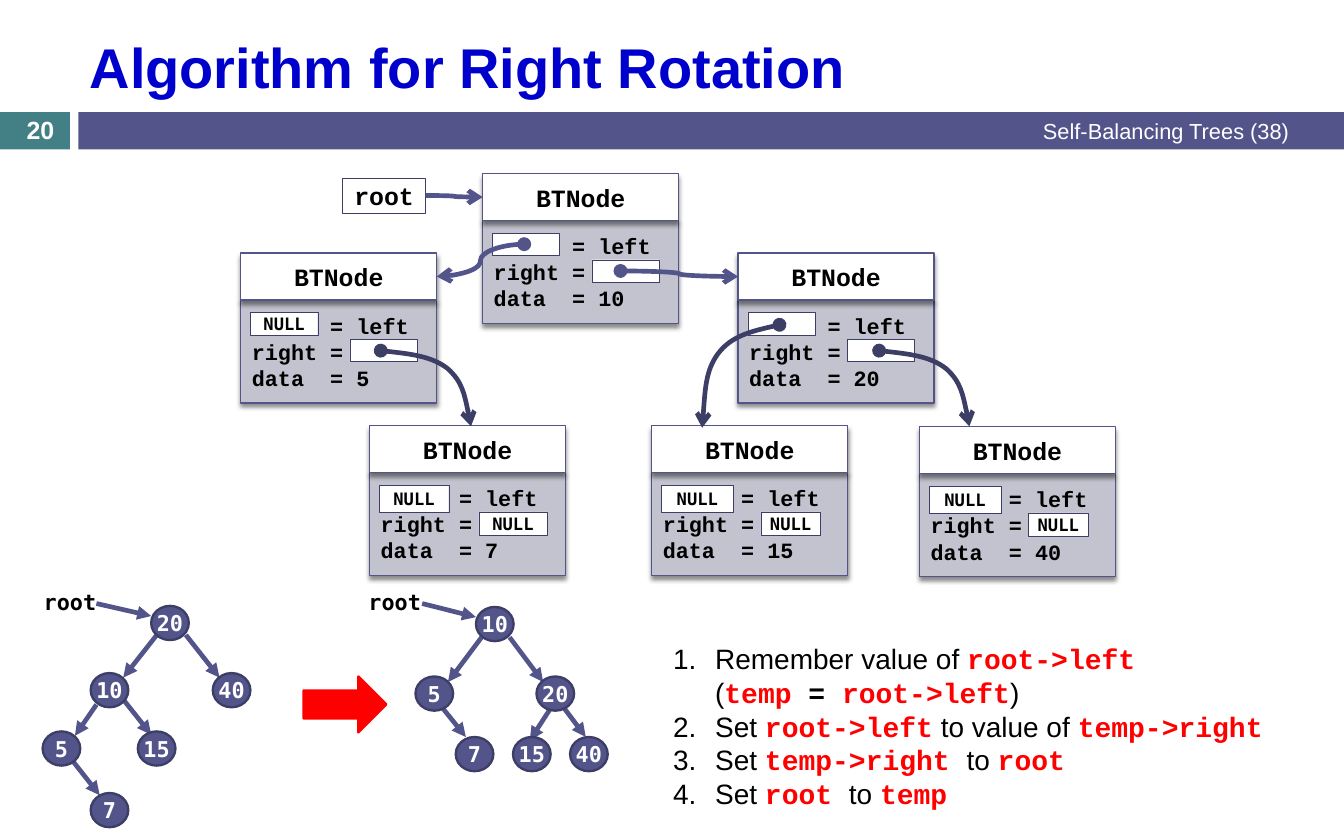
"""Build a slide that explains right rotation of a binary tree."""
import pptx
import pptx.dml.color
import pptx.enum.shapes
import pptx.enum.text
import pptx.oxml.ns
import pptx.util
from lxml import etree

Pt = pptx.util.Pt
qn = pptx.oxml.ns.qn
SHAPE = pptx.enum.shapes.MSO_SHAPE
CONNECTOR = pptx.enum.shapes.MSO_CONNECTOR
ALIGN = pptx.enum.text.PP_ALIGN
ANCHOR = pptx.enum.text.MSO_ANCHOR

INDIGO, NAVY, TEAL, GREY = "53548A", "3D3E66", "438086", "C3C3CF"
BLACK, WHITE, RED, BLUE = "000000", "FFFFFF", "FF0000", "0000CC"
SANS, CODE, MONO = "Arial", "Courier New", "DejaVu Sans Mono"


def rgb(value):
    return pptx.dml.color.RGBColor.from_string(value)


def set_font(font, name, size, color, bold=True):
    font.name, font.size, font.bold = name, Pt(size), bold
    font.color.rgb = rgb(color)


def add_xml(parent, tag, **attributes):
    return etree.SubElement(parent, qn(tag), attributes)


class SlideBuilder:
    def __init__(self, slide):
        self.slide = slide
        self.shapes = slide.shapes

    def set_text(self, shape, lines, name, size, color, bold=True, align=ALIGN.CENTER,
                 anchor=ANCHOR.MIDDLE, inset=None, tab=None):
        frame = shape.text_frame
        frame.word_wrap = True
        frame.vertical_anchor = anchor
        if inset is not None:
            frame.margin_left = frame.margin_right = Pt(inset)
            frame.margin_top = frame.margin_bottom = Pt(inset)
        frame.text = "\n".join(lines)
        for paragraph in frame.paragraphs:
            paragraph.alignment = align
            if tab:
                stops = add_xml(paragraph._p.get_or_add_pPr(), "a:tabLst")
                add_xml(stops, "a:tab", pos=str(Pt(tab)), algn="l")
            set_font(paragraph.font, name, size, color, bold)

    def box(self, frame, fill, line=None, width=0.25, kind=SHAPE.RECTANGLE, shadow=False):
        shape = self.shapes.add_shape(kind, *map(Pt, frame))
        shape.shadow.inherit = False
        shape.fill.solid()
        shape.fill.fore_color.rgb = rgb(fill)
        if line:
            shape.line.color.rgb = rgb(line)
            shape.line.width = Pt(width)
        else:
            shape.line.fill.background()
        if shadow:
            effects = shape.element.spPr.find(qn("a:effectLst"))
            outer = add_xml(effects, "a:outerShdw", blurRad=str(Pt(3)), dist=str(Pt(2.4)),
                            dir="5400000", rotWithShape="0")
            tint = add_xml(outer, "a:srgbClr", val=BLACK)
            add_xml(tint, "a:alpha", val="45000")
        return shape

    def label(self, frame, text, name, size, color, **style):
        self.set_text(self.shapes.add_textbox(*map(Pt, frame)), [text], name, size, color, **style)

    def place(self, placeholder, frame):
        placeholder.left, placeholder.top, placeholder.width, placeholder.height = map(Pt, frame)

    def title(self, frame, text):
        self.place(self.shapes.title, frame)
        self.set_text(self.shapes.title, [text], SANS, 36, BLUE, align=ALIGN.LEFT)

    def steps(self, frame, items):
        body = self.slide.placeholders[1]
        self.place(body, frame)
        text = body.text_frame
        text.auto_size = pptx.enum.text.MSO_AUTO_SIZE.NONE
        text.vertical_anchor = ANCHOR.TOP
        for index, item in enumerate(items):
            paragraph = text.paragraphs[0] if index == 0 else text.add_paragraph()
            paragraph.space_before = Pt(0)
            properties = paragraph._p.get_or_add_pPr()
            properties.set("marL", str(Pt(27)))
            properties.set("indent", str(Pt(-27)))
            add_xml(properties, "a:buFont", typeface=SANS)
            add_xml(properties, "a:buAutoNum", type="arabicPeriod")
            set_font(paragraph.font, SANS, 18, BLACK, False)
            for wording, name, color in item:
                if wording == "\n":
                    paragraph.add_line_break()
                    continue
                run = paragraph.add_run()
                run.text = wording
                set_font(run.font, name, 18, color, name == CODE)

    def stroke(self, shape, color, head, tail):
        shape.line.color.rgb = rgb(color)
        shape.line.width = Pt(3)
        line = shape.element.spPr.find(qn("a:ln"))
        add_xml(line, "a:headEnd", type=head)
        add_xml(line, "a:tailEnd", type=tail)

    def link(self, ends, kind=CONNECTOR.STRAIGHT, head="none", tail="triangle",
             begin=None, end=None):
        connector = self.shapes.add_connector(kind, *map(Pt, ends))
        if begin:
            connector.begin_connect(*begin)
        if end:
            connector.end_connect(*end)
        self.stroke(connector, INDIGO, head, tail)
        add_xml(connector.element.spPr, "a:effectLst")

    def pointer(self, x, y, offsets):
        builder = self.shapes.build_freeform(Pt(x), Pt(y))
        builder.add_line_segments([(Pt(x + dx), Pt(y + dy)) for dx, dy in offsets], close=False)
        curve = builder.convert_to_shape()
        curve.shadow.inherit = False
        curve.fill.background()
        segments = curve.element.xpath(".//a:lnTo")
        for first in range(0, len(segments), 3):
            bezier = etree.Element(qn("a:cubicBezTo"))
            segments[first].addprevious(bezier)
            for segment in segments[first:first + 3]:
                bezier.append(segment[0])
                segment.getparent().remove(segment)
        self.stroke(curve, NAVY, "oval", "arrow")

    def slot(self, frame, value):
        field = self.box(frame, WHITE, NAVY)
        if value:
            self.set_text(field, [value], MONO, 11, BLACK, inset=0)

    def node(self, data, x, y, left, right, left_size, right_size):
        fields = self.box((x, y + 30.2, 126, 66.2), GREY, INDIGO, 0.79, shadow=True)
        self.set_text(fields, ["\t= left", "right\t=", f"data\t= {data}"], CODE, 14, BLACK,
                      align=ALIGN.LEFT, tab=50.4)
        self.slot((x + 6.3, y + 38.3, *left_size), left)
        self.slot((x + 70.2, y + 55.4, *right_size), right)
        header = self.box((x, y, 126, 30.2), WHITE, INDIGO, 0.79, shadow=True)
        self.set_text(header, ["BTNode"], CODE, 16, BLACK)
        return header

    def tree(self, root_frame, edges, nodes):
        self.label(root_frame, "root", MONO, 14, BLACK, align=ALIGN.RIGHT,
                   anchor=ANCHOR.TOP, inset=0)
        for ends in edges:
            self.link(ends)
        for data, x, y in nodes:
            circle = self.box((x, y, 24.2, 22), INDIGO, NAVY, 1.5, SHAPE.OVAL)
            self.set_text(circle, [str(data)], MONO, 14, WHITE, inset=0)


def main():
    deck = pptx.Presentation()
    deck.slide_width, deck.slide_height = Pt(864), Pt(540)
    page = SlideBuilder(deck.slides.add_slide(deck.slide_layouts[1]))

    page.box((0, 72, 45, 24), TEAL)
    page.box((50.4, 72, 813.6, 24), INDIGO)
    page.title((50.4, 13.7, 785.5, 57.6), "Algorithm for Right Rotation")
    page.label((324, 71.3, 512, 25.2), "Self-Balancing Trees (38)", SANS, 14, WHITE,
               bold=False, align=ALIGN.RIGHT)
    page.label((0, 72.7, 51.8, 21.6), "20", SANS, 16, WHITE)

    root = page.box((220.3, 114.5, 53.3, 22.3), WHITE, NAVY)
    page.set_text(root, ["root"], CODE, 16, BLACK)
    wide, leaf_left, leaf_right = (43.2, 14.4), (46, 17.3), (38.2, 15.1)
    node_rows = [
        (10, 310.3, 111.6, "", "", wide, wide),
        (20, 474.5, 162.7, "", "", wide, wide),
        (5, 154.8, 162.7, "NULL", "", wide, wide),
        (15, 419, 273.6, "NULL", "NULL", leaf_left, leaf_right),
        (7, 237.6, 273.6, "NULL", "NULL", (44.6, 17.3), (43.9, 15.1)),
        (40, 591.1, 274.3, "NULL", "NULL", leaf_left, leaf_right),
    ]
    headers = {row[0]: page.node(*row) for row in node_rows}
    page.link((273.6, 125.6, 310.3, 126.7), CONNECTOR.CURVE, tail="arrow",
              begin=(root, 3), end=(headers[10], 1))
    page.link((398.9, 174.2, 474.5, 177.8), CONNECTOR.CURVE, "oval", "arrow",
              end=(headers[20], 1))
    page.link((337, 157, 280.8, 177.8), CONNECTOR.CURVE, "oval", "arrow",
              end=(headers[5], 3))
    to_right = [(16.6, 1.8), (33.1, 3.6), (43.2, 11.7), (52.6, 20.2), (55.4, 34.6), (58, 48.6)]
    to_left = [(-15.8, 3.6), (-31, 7.2), (-39.6, 18.7), (-47.5, 29.5), (-48.2, 48.2),
               (-49.7, 66.2)]
    for x, y, offsets in ((244.8, 225.4, to_right), (565.2, 225.4, to_right),
                          (501.1, 208.8, to_left)):
        page.pointer(x, y, offsets)

    page.tree(
        (15.1, 378.7, 46.8, 17.3),
        [(62, 388, 97.2, 396), (100.8, 408.2, 79.2, 435.6), (119.5, 408.2, 141.1, 435.6),
         (62, 453, 48.2, 473), (74.9, 444.2, 97.2, 472.3), (42.5, 483.8, 64.1, 511.2)],
        [(20, 97.2, 389.5), (10, 58.3, 432.7), (40, 136.8, 432.7), (5, 27.4, 470.2),
         (15, 88.6, 470.2), (7, 58.3, 509.8)])
    page.tree(
        (224.6, 378.7, 46.1, 17.3),
        [(271.4, 388, 306, 396.7), (309.6, 409.7, 288, 438.5), (327.6, 409.7, 349.2, 438.5),
         (278, 447.1, 299.5, 473.8), (354.2, 455, 340.6, 476), (355, 445, 376.6, 473.8)],
        [(10, 306, 390.2), (5, 267.1, 434.9), (20, 344.9, 434.9), (15, 329.8, 473.8),
         (7, 293, 473.8), (40, 366.5, 473.8)])
    page.box((195.1, 434.9, 53.3, 36), RED, RED, 1.5, SHAPE.RIGHT_ARROW)

    def plain(wording):
        return wording, SANS, BLACK

    def code(wording, color=RED):
        return wording, CODE, color

    page.steps((425.5, 409, 414.7, 116.6), [
        [plain("Remember value of "), code("root->left"), plain("\n"), plain("("),
         code("temp"), code(" = ", BLACK), code("root->left"), plain(")")],
        [plain("Set "), code("root->left"), plain(" to value of "), code("temp->right")],
        [plain("Set "), code("temp->right "), plain("to "), code("root")],
        [plain("Set "), code("root "), plain("to "), code("temp")],
    ])
    deck.save("out.pptx")


if __name__ == "__main__":
    main()
